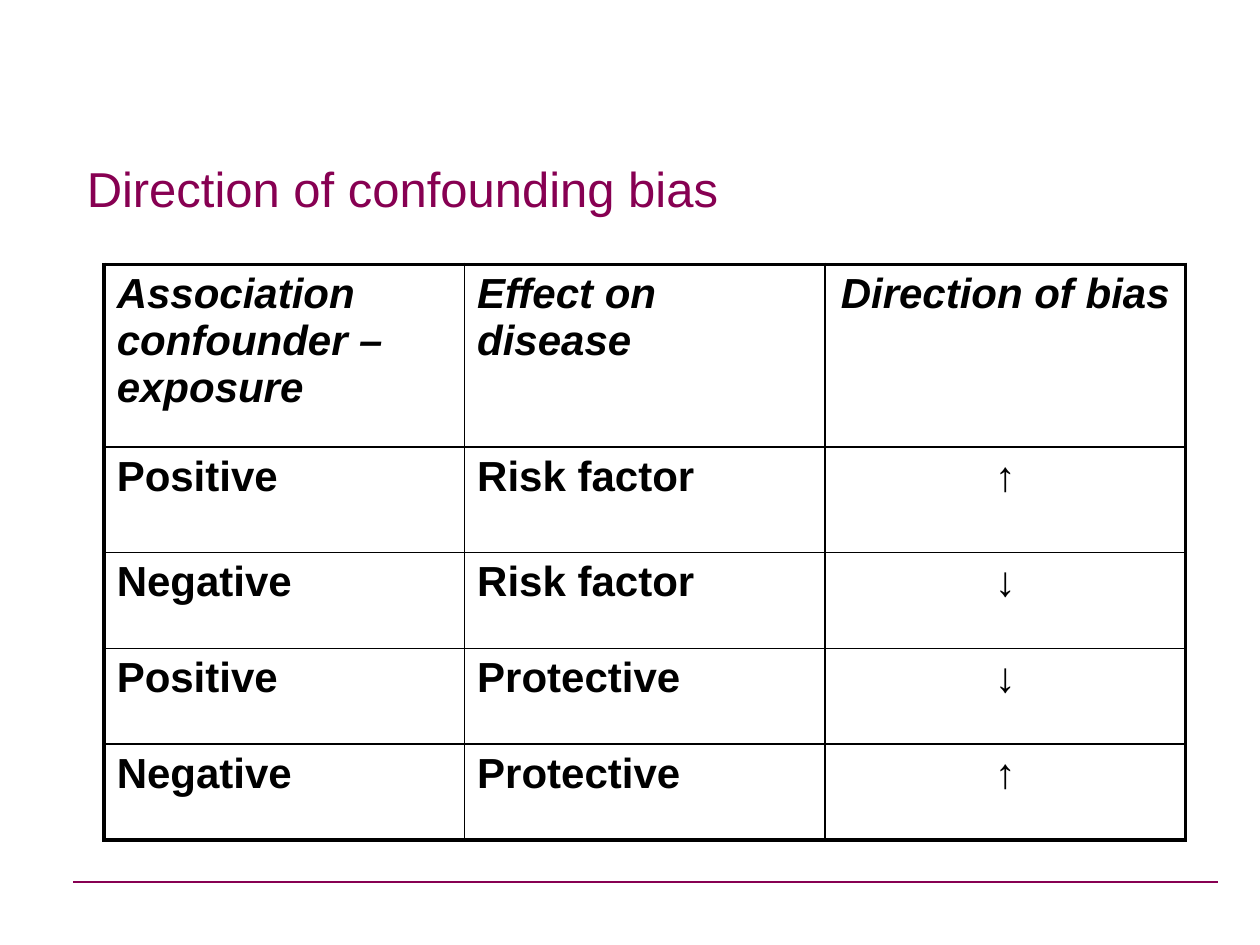
from lxml import etree
from pptx import Presentation
from pptx.dml.color import RGBColor
from pptx.enum.shapes import MSO_CONNECTOR
from pptx.enum.text import MSO_ANCHOR, PP_ALIGN
from pptx.oxml.ns import qn
from pptx.util import Cm, Pt

STRAIGHT = MSO_CONNECTOR.STRAIGHT
TOP = MSO_ANCHOR.TOP
LEFT, CENTER = PP_ALIGN.LEFT, PP_ALIGN.CENTER

FONT = "Arial"
PLUM, BLACK, WHITE = "870052", "000000", "FFFFFF"
OUTER_BORDER, INNER_BORDER = Pt(2.25), Pt(1)

ROWS = [
    ("Association confounder – exposure", "Effect on disease", "Direction of bias"),
    ("Positive", "Risk factor", "↑"),
    ("Negative", "Risk factor", "↓"),
    ("Positive", "Protective", "↓"),
    ("Negative", "Protective", "↑"),
]
ROW_HEIGHTS = [Cm(height) for height in (3.68, 2.13, 1.93, 1.93, 1.93)]


def color(hex_value):
    return RGBColor.from_string(hex_value)


def format_font(font, size, hex_value, bold=False, italic=False):
    font.name = FONT
    font.size = Pt(size)
    font.bold = bold
    font.italic = italic
    font.color.rgb = color(hex_value)


def add_title(slide, left, top, width, height):
    text_frame = slide.shapes.add_textbox(left, top, width, height).text_frame
    text_frame.word_wrap = True
    text_frame.vertical_anchor = TOP
    text_frame.margin_top = Cm(0.28)
    text_frame.text = "Direction of confounding bias"
    format_font(text_frame.paragraphs[0].runs[0].font, 28, PLUM)


def set_border(cell, side, width):
    properties = cell._tc.get_or_add_tcPr()
    line = etree.SubElement(properties, qn(f"a:ln{side}"), w=str(width))
    fill = etree.SubElement(line, qn("a:solidFill"))
    etree.SubElement(fill, qn("a:srgbClr"), val=BLACK)


def add_bias_table(slide, left, top, width):
    row_count, column_count = len(ROWS), len(ROWS[0])
    last_row, last_column = row_count - 1, column_count - 1
    table = slide.shapes.add_table(
        row_count, column_count, left, top, width, sum(ROW_HEIGHTS)
    ).table
    table.first_row = False
    table.horz_banding = False
    for column in table.columns:
        column.width = width // column_count

    for row_index, texts in enumerate(ROWS):
        table.rows[row_index].height = ROW_HEIGHTS[row_index]
        for column_index, text in enumerate(texts):
            cell = table.cell(row_index, column_index)
            cell.text = text
            paragraph = cell.text_frame.paragraphs[0]
            paragraph.alignment = CENTER if column_index == last_column else LEFT
            format_font(paragraph.runs[0].font, 24, BLACK, True, row_index == 0)

            # Borders come before the fill in the cell properties
            outer_sides = {
                "L": column_index == 0,
                "R": column_index == last_column,
                "T": row_index == 0,
                "B": row_index == last_row,
            }
            for side, is_outer in outer_sides.items():
                set_border(cell, side, OUTER_BORDER if is_outer else INNER_BORDER)
            cell.fill.solid()
            cell.fill.fore_color.rgb = color(WHITE)


def add_footer_line(slide, left, top, width):
    line = slide.shapes.add_connector(STRAIGHT, left, top, left + width, top)
    line.line.color.rgb = color(PLUM)
    line.line.width = Pt(0.75)
    etree.SubElement(line._element.spPr, qn("a:effectLst"))


def main():
    presentation = Presentation()
    presentation.slide_width = Cm(25.4)
    presentation.slide_height = Cm(19.05)
    slide = presentation.slides.add_slide(presentation.slide_layouts[6])

    # Footer rule, title and table
    add_footer_line(slide, Cm(1.48), Cm(17.78), Cm(23.08))
    add_title(slide, Cm(1.5), Cm(2.92), Cm(21.59), Cm(3.18))
    add_bias_table(slide, Cm(2.1), Cm(5.33), Cm(21.8))

    presentation.save("out.pptx")


if __name__ == "__main__":
    main()
